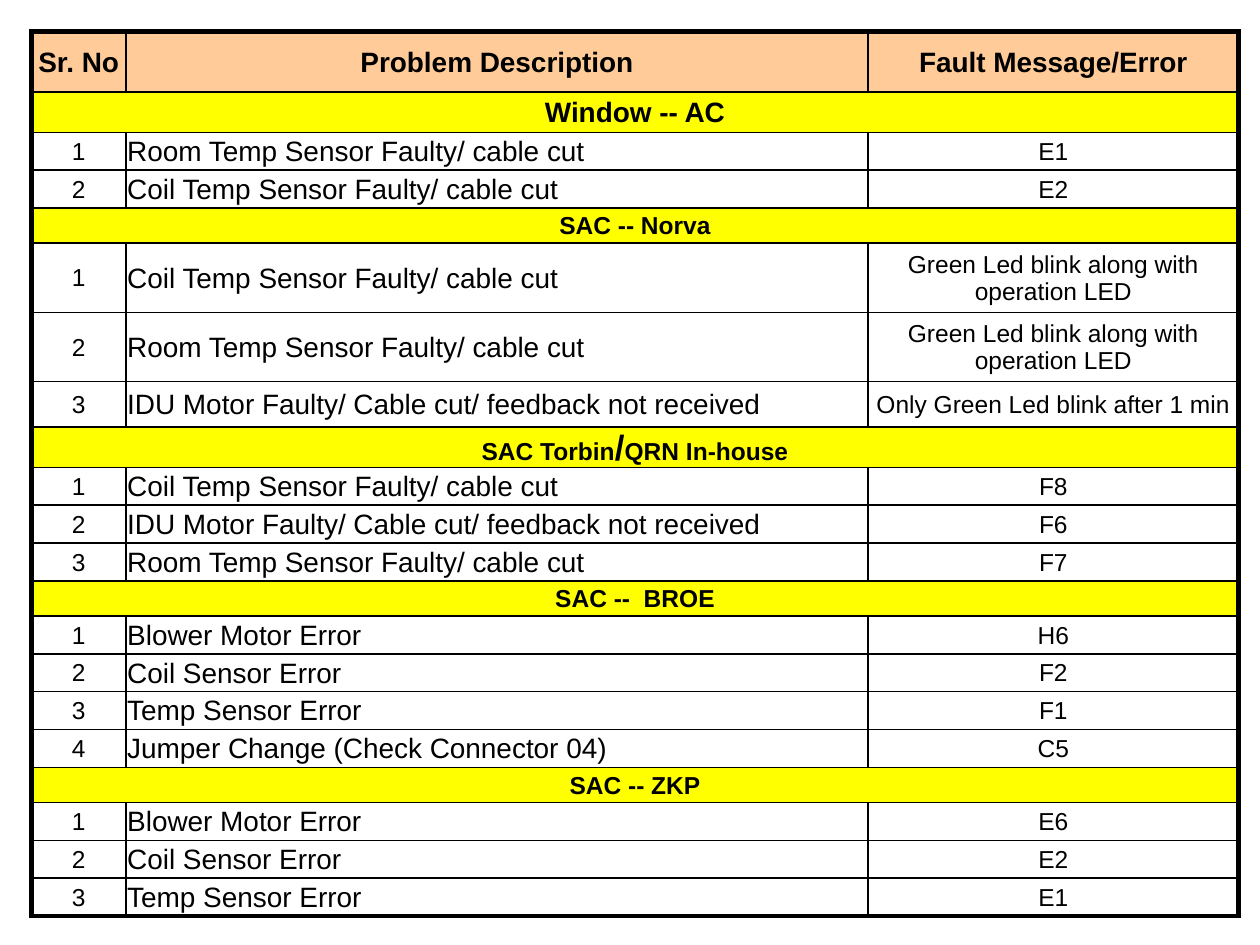
from lxml.etree import SubElement
from pptx import Presentation
from pptx.dml.color import RGBColor
from pptx.enum.text import MSO_ANCHOR, PP_ALIGN
from pptx.oxml.ns import qn
from pptx.util import Inches, Pt

HEADINGS = ("Sr. No", "Problem Description", "Fault Message/Error")
ROOM_CUT = "Room Temp Sensor Faulty/ cable cut"
COIL_CUT = "Coil Temp Sensor Faulty/ cable cut"
MOTOR_CUT = "IDU Motor Faulty/ Cable cut/ feedback not received"
GREEN_LED = "Green Led blink along with operation LED"

# Section: title runs as (text, size), row height, faults as (problem, message, row height)
SECTIONS = [
    ([("Window -- AC", 16)], 0.32,
     [(ROOM_CUT, "E1", 0.3), (COIL_CUT, "E2", 0.3)]),
    ([("SAC -- Norva", 14)], 0.28,
     [(COIL_CUT, GREEN_LED, 0.55), (ROOM_CUT, GREEN_LED, 0.55),
      (MOTOR_CUT, "Only Green Led blink after 1 min", 0.36)]),
    ([("SAC Torbin", 14), ("/", 20), ("QRN In-house", 14)], 0.27,
     [(COIL_CUT, "F8", 0.3), (MOTOR_CUT, "F6", 0.3), (ROOM_CUT, "F7", 0.3)]),
    ([("SAC --  BROE", 14)], 0.28,
     [("Blower Motor Error", "H6", 0.3), ("Coil Sensor Error", "F2", 0.3),
      ("Temp Sensor Error", "F1", 0.3),
      ("Jumper Change (Check Connector 04)", "C5", 0.3)]),
    ([("SAC -- ZKP", 14)], 0.28,
     [("Blower Motor Error", "E6", 0.3), ("Coil Sensor Error", "E2", 0.3),
      ("Temp Sensor Error", "E1", 0.3)]),
]
COLUMN_WIDTHS = (0.75, 5.89, 2.94)
HEADER_HEIGHT = 0.48
HEADER_FILL, SECTION_FILL, INK = "FFCC99", "FFFF00", "000000"
OUTER_LINE, INNER_LINE = 3, 1


def rgb(hex_color):
    return RGBColor.from_string(hex_color)


def write_cell(cell, runs, bold=False, align=PP_ALIGN.CENTER, fill=None):
    cell.vertical_anchor = MSO_ANCHOR.MIDDLE
    cell.margin_left = cell.margin_right = cell.margin_top = Inches(0.01)
    cell.margin_bottom = 0
    if fill:
        cell.fill.solid()
        cell.fill.fore_color.rgb = rgb(fill)
    else:
        cell.fill.background()
    paragraph = cell.text_frame.paragraphs[0]
    paragraph.alignment = align
    for text, size in runs:
        run = paragraph.add_run()
        run.text = text
        run.font.name = "Arial"
        run.font.size = Pt(size)
        run.font.bold = bold
        run.font.color.rgb = rgb(INK)


def draw_borders(cell, widths):
    """Draw the left, right, top and bottom borders, with widths in points."""
    properties = cell._tc.get_or_add_tcPr()
    for position, (side, width) in enumerate(zip("LRTB", widths)):
        line = SubElement(properties, qn(f"a:ln{side}"), w=str(Pt(width)))
        line_fill = SubElement(line, qn("a:solidFill"))
        SubElement(line_fill, qn("a:srgbClr"), val=INK)
        properties.insert(position, line)  # borders come before the fill


def main():
    presentation = Presentation()
    presentation.slide_width, presentation.slide_height = Inches(10), Inches(7.5)
    slide = presentation.slides.add_slide(presentation.slide_layouts[6])

    heights = [HEADER_HEIGHT]
    for _, section_height, faults in SECTIONS:
        heights += [section_height, *(height for *_, height in faults)]
    row_count, column_count = len(heights), len(COLUMN_WIDTHS)
    table = slide.shapes.add_table(
        row_count, column_count, Inches(0.25), Inches(0.25),
        Inches(sum(COLUMN_WIDTHS)), Inches(sum(heights))).table
    table.first_row = table.horz_banding = False
    for column, width in zip(table.columns, COLUMN_WIDTHS):
        column.width = Inches(width)
    for row, height in zip(table.rows, heights):
        row.height = Inches(height)

    for column, heading in enumerate(HEADINGS):
        write_cell(table.cell(0, column), [(heading, 16)], bold=True, fill=HEADER_FILL)
    row = 1
    for title_runs, _, faults in SECTIONS:
        title_cell = table.cell(row, 0)
        title_cell.merge(table.cell(row, column_count - 1))
        write_cell(title_cell, title_runs, bold=True, fill=SECTION_FILL)
        for number, (problem, message, _) in enumerate(faults, start=1):
            write_cell(table.cell(row + number, 0), [(str(number), 14)])
            write_cell(table.cell(row + number, 1), [(problem, 16)], align=PP_ALIGN.LEFT)
            write_cell(table.cell(row + number, 2), [(message, 14)])
        row += 1 + len(faults)

    for row in range(row_count):
        for column in range(column_count):
            cell = table.cell(row, column)
            on_edge = (column == 0,
                       column == column_count - 1 or cell.is_merge_origin,
                       row == 0,
                       row == row_count - 1)
            draw_borders(cell, [OUTER_LINE if edge else INNER_LINE for edge in on_edge])

    presentation.save("out.pptx")


if __name__ == "__main__":
    main()
